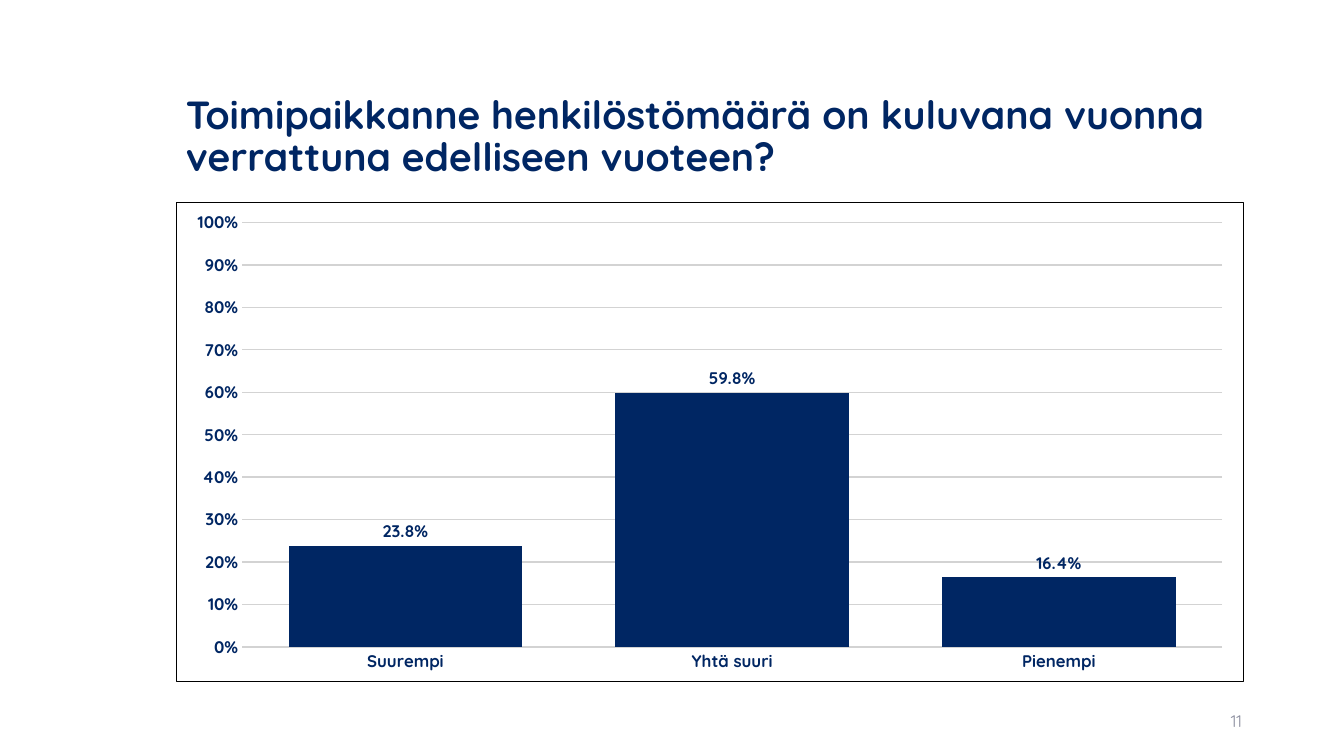
from lxml import etree
from pptx import Presentation
from pptx.chart.data import CategoryChartData
from pptx.dml.color import RGBColor
from pptx.enum.chart import XL_CHART_TYPE, XL_LABEL_POSITION, XL_TICK_MARK
from pptx.enum.text import MSO_ANCHOR, PP_ALIGN
from pptx.util import Emu, Pt

COLUMNS = XL_CHART_TYPE.COLUMN_CLUSTERED
ABOVE = XL_LABEL_POSITION.OUTSIDE_END
NO_TICKS = XL_TICK_MARK.NONE
MIDDLE = MSO_ANCHOR.MIDDLE
LEFT, RIGHT = PP_ALIGN.LEFT, PP_ALIGN.RIGHT

# Content
TITLE = "Toimipaikkanne henkilöstömäärä on kuluvana vuonna verrattuna edelliseen vuoteen?"
PAGE_NUMBER = "11"
SHARES = {"Suurempi": 0.238, "Yhtä suuri": 0.598, "Pienempi": 0.164}

# Style and layout: left, top, width, height in px
FONT = "Quicksand"
COLORS = {"navy": "002663", "gray": "8C8E9F", "grid": "D3D3D3",
          "white": "FFFFFF", "black": "000000"}
PAGE_SIZE = (1344, 756)
TITLE_AREA = (176, 65, 1068, 146)
CHART_AREA = (176, 202, 1068, 480)
NUMBER_AREA = (950, 701, 302, 40)
EMU_PER_PX = 914400 / 100.8


def px(*lengths):
    return [Emu(round(length * EMU_PER_PX)) for length in lengths]


def color(name):
    return RGBColor.from_string(COLORS[name])


def style_font(font, size, name, bold):
    font.name = FONT
    font.size = Pt(size)
    font.bold = bold
    font.color.rgb = color(name)


def add_text(page, area, text, size, name, bold, align, spacing):
    box = page.shapes.add_textbox(*px(*area))
    frame = box.text_frame
    frame.word_wrap = True
    frame.vertical_anchor = MIDDLE
    para = frame.paragraphs[0]
    para.alignment = align
    para.line_spacing = spacing
    span = para.add_run()
    span.text = text
    style_font(span.font, size, name, bold)


def add_frame(chart):
    """Give the whole chart a white fill and a thin black border."""
    space = chart.element
    namespaces = space.nsmap
    frame = etree.Element("{%s}spPr" % namespaces["c"], nsmap=namespaces)
    drawing = "{%s}" % namespaces["a"]
    line = etree.Element(drawing + "ln", w=str(Pt(0.5)))
    for parent, name in ((frame, "white"), (line, "black")):
        fill = etree.SubElement(parent, drawing + "solidFill")
        etree.SubElement(fill, drawing + "srgbClr", val=COLORS[name])
    frame.append(line)
    space.find("c:chart", namespaces).addnext(frame)


def add_share_chart(page):
    data = CategoryChartData(number_format="0.0%")
    data.categories = list(SHARES)
    data.add_series("Series 1", list(SHARES.values()))
    chart = page.shapes.add_chart(COLUMNS, *px(*CHART_AREA), data).chart
    chart.has_title = False
    chart.has_legend = False
    style_font(chart.font, 12, "navy", True)
    add_frame(chart)

    # Columns and their labels
    plot = chart.plots[0]
    plot.vary_by_categories = False
    plot.gap_width = 40
    plot.overlap = -2
    fill = plot.series[0].format.fill
    fill.solid()
    fill.fore_color.rgb = color("navy")
    plot.has_data_labels = True
    labels = plot.data_labels
    labels.show_value = True
    labels.number_format = "0.0%"
    labels.number_format_is_linked = False
    labels.position = ABOVE
    style_font(labels.font, 12, "navy", True)

    # Axes
    for axis in (chart.category_axis, chart.value_axis):
        axis.major_tick_mark = NO_TICKS
        axis.format.line.fill.background()
    scale = chart.value_axis
    scale.minimum_scale = 0
    scale.maximum_scale = 1
    scale.major_unit = 0.1
    scale.tick_labels.number_format = "0%"
    scale.tick_labels.number_format_is_linked = False
    grid = scale.major_gridlines.format.line
    grid.color.rgb = color("grid")
    grid.width = Pt(1)


def main():
    deck = Presentation()
    deck.slide_width, deck.slide_height = px(*PAGE_SIZE)
    page = deck.slides.add_slide(deck.slide_layouts[6])
    add_text(page, TITLE_AREA, TITLE, 28, "navy", True, LEFT, 0.9)
    add_text(page, NUMBER_AREA, PAGE_NUMBER, 12, "gray", False, RIGHT, 1.0)
    add_share_chart(page)
    deck.save("out.pptx")


if __name__ == "__main__":
    main()
